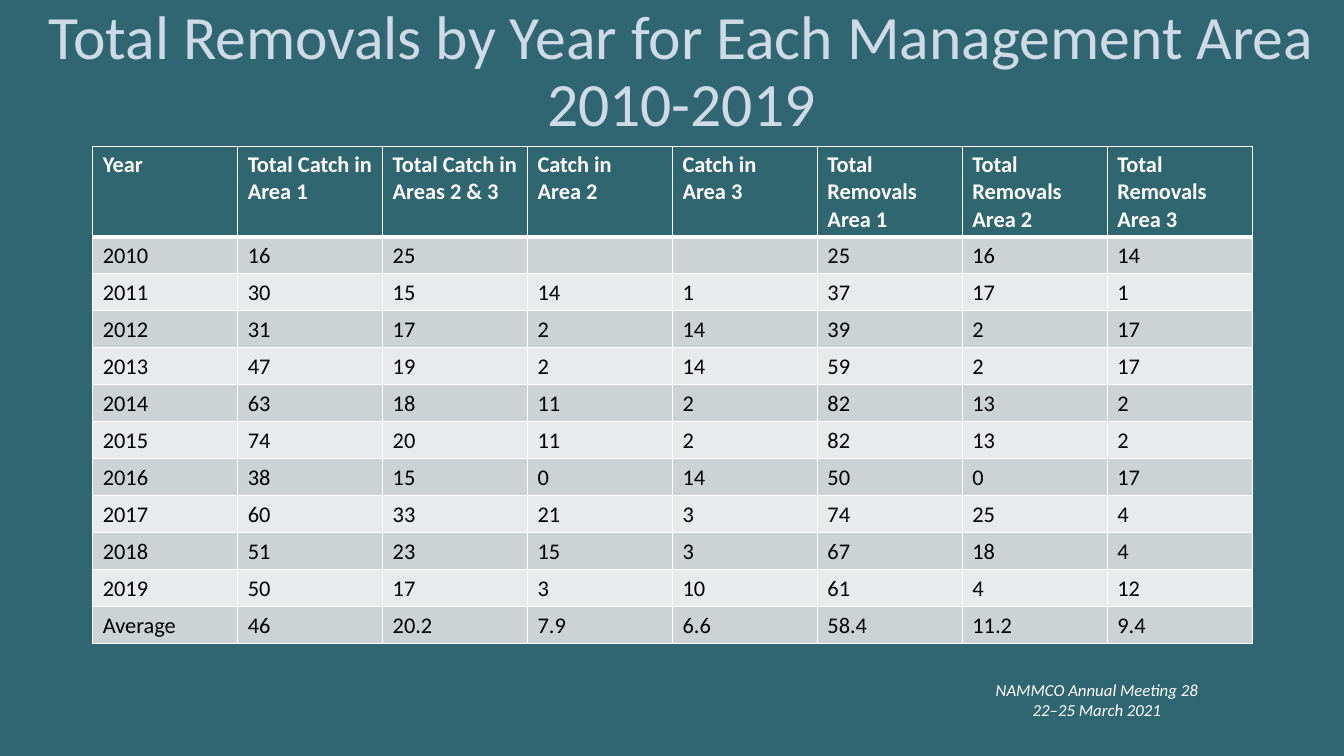
from dataclasses import dataclass

from lxml.etree import SubElement
from pptx import Presentation
from pptx.dml.color import RGBColor
from pptx.enum.text import MSO_ANCHOR as Anchor, MSO_AUTO_SIZE as AutoSize, PP_ALIGN as Align
from pptx.oxml.ns import qn
from pptx.util import Inches, Pt


@dataclass(frozen=True)
class Theme:
    font: str = "Calibri"
    background: str = "306672"
    title: str = "CEDBE6"
    header: str = "306670"
    bands: tuple = ("CDD3D5", "E8EAEB")
    light: str = "FFFFFF"
    dark: str = "000000"
    title_size: int = 44
    table_size: int = 16
    footer_size: int = 12
    thin_border: int = 1
    thick_border: int = 3


THEME = Theme()

HEADERS = [
    "Year", "Total Catch in Area 1", "Total Catch in Areas 2 & 3",
    "Catch in\nArea 2", "Catch in\nArea 3",
    "Total Removals Area 1", "Total Removals Area 2", "Total Removals Area 3",
]
REMOVALS = [
    ["2010", "16", "25", "", "", "25", "16", "14"],
    ["2011", "30", "15", "14", "1", "37", "17", "1"],
    ["2012", "31", "17", "2", "14", "39", "2", "17"],
    ["2013", "47", "19", "2", "14", "59", "2", "17"],
    ["2014", "63", "18", "11", "2", "82", "13", "2"],
    ["2015", "74", "20", "11", "2", "82", "13", "2"],
    ["2016", "38", "15", "0", "14", "50", "0", "17"],
    ["2017", "60", "33", "21", "3", "74", "25", "4"],
    ["2018", "51", "23", "15", "3", "67", "18", "4"],
    ["2019", "50", "17", "3", "10", "61", "4", "12"],
    ["Average", "46", "20.2", "7.9", "6.6", "58.4", "11.2", "9.4"],
]


def write_text(frame, text, size, color, align=Align.LEFT, bold=False, italic=False):
    for index, line in enumerate(text.split("\n")):
        paragraph = frame.paragraphs[0] if index == 0 else frame.add_paragraph()
        paragraph.alignment = align
        if not line:
            SubElement(paragraph._p, qn("a:endParaRPr"), sz=str(size * 100))
            continue
        run = paragraph.add_run()
        run.text = line
        run.font.name = THEME.font
        run.font.size = Pt(size)
        run.font.bold = bold
        run.font.italic = italic
        run.font.color.rgb = RGBColor.from_string(color)


def add_title(slide, text):
    title = slide.shapes.title
    title.left, title.top = Inches(0.19), Inches(0)
    title.width, title.height = Inches(13.14), Inches(1.45)
    frame = title.text_frame
    frame.word_wrap = True
    frame.auto_size = AutoSize.NONE
    frame.vertical_anchor = Anchor.MIDDLE
    write_text(frame, text, THEME.title_size, THEME.title, Align.CENTER)
    frame.paragraphs[0].line_spacing = 0.9


def add_footer(slide, text):
    footer = slide.shapes.add_textbox(Inches(9.73), Inches(6.74), Inches(2.3), Inches(0.4))
    frame = footer.text_frame
    frame.word_wrap = True
    frame.vertical_anchor = Anchor.MIDDLE
    write_text(frame, text, THEME.footer_size, THEME.light, Align.CENTER, italic=True)


def add_border(cell, side, width):
    properties = cell._tc.get_or_add_tcPr()
    line = SubElement(properties, qn(f"a:ln{side}"), w=str(Pt(width)))
    fill = SubElement(line, qn("a:solidFill"))
    SubElement(fill, qn("a:srgbClr"), val=THEME.light)


def format_cell(cell, text, row):
    is_header = row == 0
    for side in "LRTB":
        touches_header_rule = (row, side) in ((0, "B"), (1, "T"))
        add_border(cell, side, THEME.thick_border if touches_header_rule else THEME.thin_border)
    cell.fill.solid()
    fill_color = THEME.header if is_header else THEME.bands[(row - 1) % 2]
    cell.fill.fore_color.rgb = RGBColor.from_string(fill_color)
    text_color = THEME.light if is_header else THEME.dark
    write_text(cell.text_frame, text, THEME.table_size, text_color, bold=is_header)


def add_removals_table(slide):
    rows = [HEADERS, *REMOVALS]
    frame = slide.shapes.add_table(
        len(rows), len(HEADERS), Inches(0.92), Inches(1.45), Inches(11.5), Inches(4.93)
    )
    table = frame.table
    table.horz_banding = False
    for column in table.columns:
        column.width = Inches(11.5 / len(HEADERS))
    for row, values in enumerate(rows):
        table.rows[row].height = Inches(0.9 if row == 0 else 0.36)
        for column, text in enumerate(values):
            format_cell(table.cell(row, column), text, row)


def main():
    presentation = Presentation()
    presentation.slide_width = Inches(13.33)
    presentation.slide_height = Inches(7.5)
    slide = presentation.slides.add_slide(presentation.slide_layouts[5])
    slide.background.fill.solid()
    slide.background.fill.fore_color.rgb = RGBColor.from_string(THEME.background)
    add_footer(slide, "NAMMCO Annual Meeting 28\n22–25 March 2021")
    add_title(slide, "Total Removals by Year for Each Management Area 2010-2019")
    add_removals_table(slide)
    presentation.save("out.pptx")


if __name__ == "__main__":
    main()
